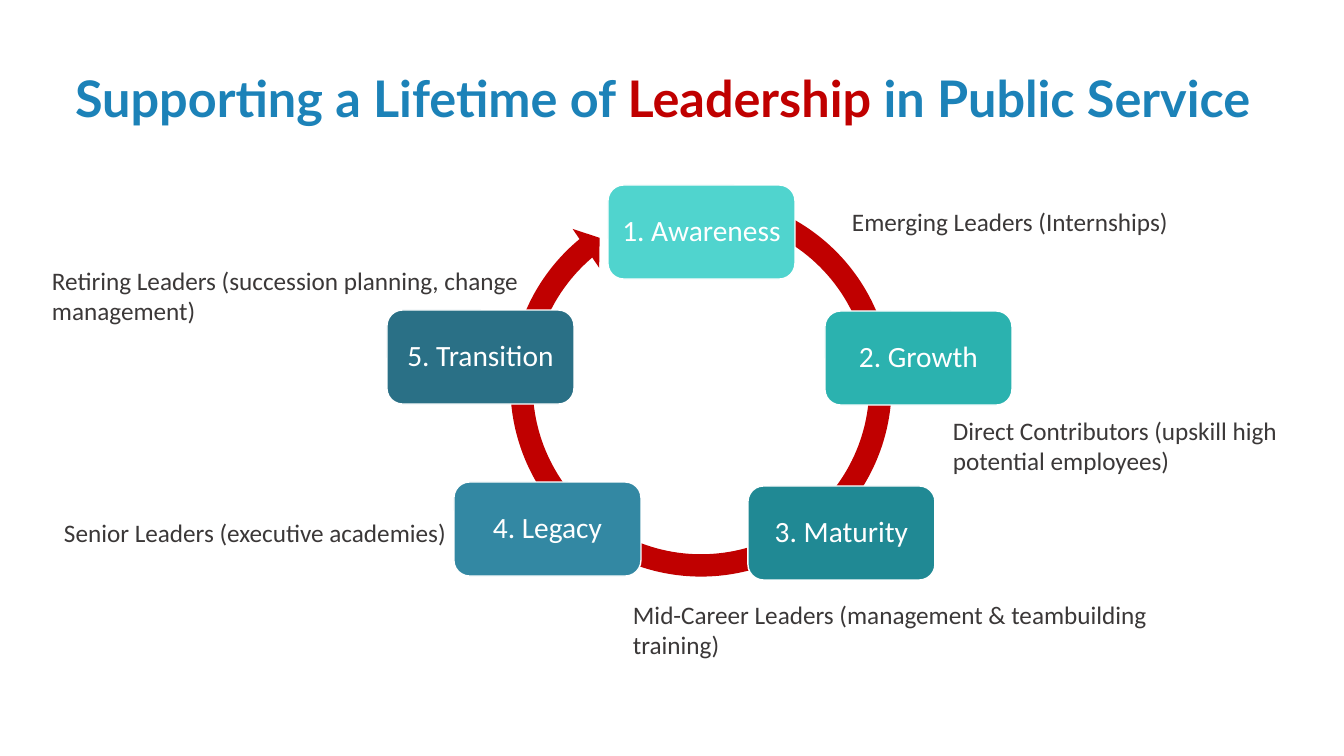
from dataclasses import dataclass

from pptx import Presentation
from pptx.dml.color import RGBColor
from pptx.enum.shapes import MSO_SHAPE
from pptx.enum.text import MSO_ANCHOR, MSO_AUTO_SIZE, PP_ALIGN
from pptx.util import Emu, Pt

SCALE = 914400 / 100.8


@dataclass(frozen=True)
class Theme:
    head_font: str = "Lato"
    body_font: str = "Calibri"
    head_size: int = 36
    step_size: int = 21
    note_size: int = 18
    blue: str = "1C82B8"
    red: str = "C00000"
    dark: str = "3B3838"
    white: str = "FFFFFF"


def px(*vals):
    return [Emu(round(val * SCALE)) for val in vals]


def write(frame, runs, font, size, bold=False, align=PP_ALIGN.LEFT,
          anchor=MSO_ANCHOR.TOP, pads=(10, 5), lines=1.0,
          fit=MSO_AUTO_SIZE.NONE):
    """Fill a text frame with one paragraph of (text, colour) runs."""
    frame.word_wrap = True
    frame.auto_size = fit
    frame.vertical_anchor = anchor
    frame.margin_left, frame.margin_top = px(*pads)
    frame.margin_right, frame.margin_bottom = px(*pads)
    para = frame.paragraphs[0]
    para.alignment, para.line_spacing = align, lines
    for text, color in runs:
        run = para.add_run()
        run.text = text
        run.font.name, run.font.size, run.font.bold = font, Pt(size), bold
        run.font.color.rgb = RGBColor.from_string(color)


class Deck:
    def __init__(self, theme):
        self.theme = theme
        self.file = Presentation()
        self.file.slide_width, self.file.slide_height = px(1344, 756)
        self.slide = self.file.slides.add_slide(self.file.slide_layouts[5])

    def title(self, runs, *box):
        head = self.slide.shapes.title
        head.left, head.top, head.width, head.height = px(*box)
        write(head.text_frame, runs, self.theme.head_font,
              self.theme.head_size, bold=True, anchor=MSO_ANCHOR.BOTTOM,
              pads=(0, 0), lines=1.1)

    def shape(self, kind, fill, *box):
        item = self.slide.shapes.add_shape(kind, *px(*box))
        item.shadow.inherit = False
        item.fill.solid()
        item.fill.fore_color.rgb = RGBColor.from_string(fill)
        item.line.fill.background()
        return item

    def ring(self, *box):
        arrow = self.shape(MSO_SHAPE.CIRCULAR_ARROW, self.theme.red, *box)
        # Band width, head angle, end angle, start angle, head width
        for i, val in enumerate((0.055, 3.307, 138.057, 173.679, 0.058)):
            arrow.adjustments[i] = val

    def step(self, text, fill, *box):
        card = self.shape(MSO_SHAPE.ROUNDED_RECTANGLE, fill, *box)
        card.line.color.rgb = RGBColor.from_string(self.theme.white)
        card.line.width = Pt(1)
        write(card.text_frame, [(text, self.theme.white)],
              self.theme.body_font, self.theme.step_size,
              align=PP_ALIGN.CENTER, anchor=MSO_ANCHOR.MIDDLE,
              pads=(9, 9), lines=0.9)

    def note(self, text, *box):
        label = self.slide.shapes.add_textbox(*px(*box))
        write(label.text_frame, [(text, self.theme.dark)],
              self.theme.body_font, self.theme.note_size,
              fit=MSO_AUTO_SIZE.SHAPE_TO_FIT_TEXT)


STEPS = [
    ("Awareness", "50D4CE", 608, 185),
    ("Growth", "2BB2AF", 825, 311),
    ("Maturity", "208994", 748, 486),
    ("Legacy", "3388A3", 454, 482),
    ("Transition", "2A7086", 387, 310),
]
NOTES = [
    ("Emerging Leaders (Internships)", 842, 201, 348, 40),
    ("Direct Contributors (upskill high potential employees)",
     943, 410, 362, 71),
    ("Mid-Career Leaders (management & teambuilding training)",
     623, 594, 581, 71),
    ("Senior Leaders (executive academies)", 54, 512, 581, 40),
    ("Retiring Leaders (succession planning, change management)",
     42, 260, 581, 71),
]


def main():
    theme = Theme()
    deck = Deck(theme)
    deck.title([("Supporting a Lifetime of ", theme.blue),
                ("Leadership ", theme.red),
                ("in Public Service", theme.blue)], 75, 22, 1228, 106)
    deck.ring(498, 183, 406, 406)
    for rank, (name, fill, left, top) in enumerate(STEPS, 1):
        deck.step(f"{rank}. {name}", fill, left, top, 187, 94)
    for text, *box in NOTES:
        deck.note(text, *box)
    deck.file.save("out.pptx")


if __name__ == "__main__":
    main()
